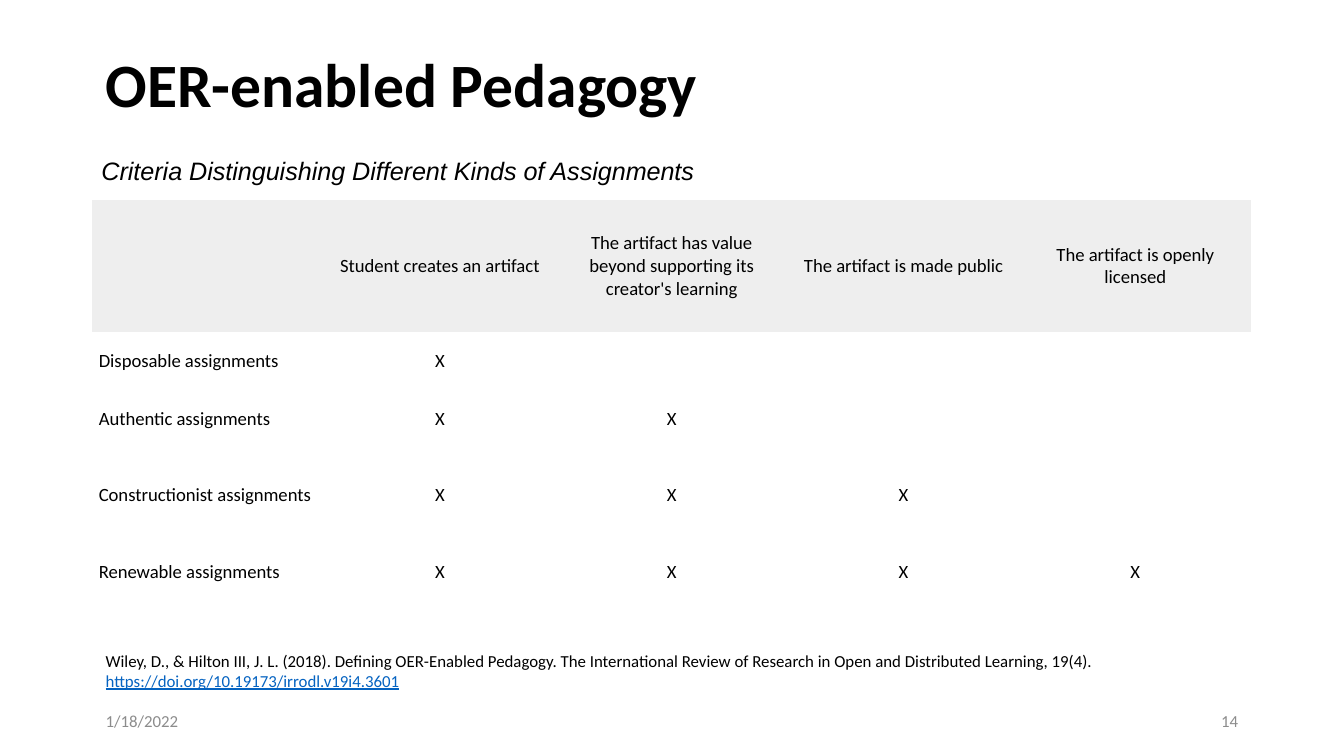
from dataclasses import dataclass

from pptx import Presentation
from pptx.dml.color import RGBColor
from pptx.enum.text import MSO_ANCHOR, PP_ALIGN
from pptx.oxml.ns import qn
from pptx.util import Inches, Pt

LEFT, CENTER, RIGHT = PP_ALIGN.LEFT, PP_ALIGN.CENTER, PP_ALIGN.RIGHT
TOP, MIDDLE = MSO_ANCHOR.TOP, MSO_ANCHOR.MIDDLE

BLACK = RGBColor(0x00, 0x00, 0x00)
GRAY = RGBColor(0x8C, 0x8C, 0x8C)
HEADER_FILL = RGBColor(0xEE, 0xEE, 0xEE)
LINK_BLUE = RGBColor(0x05, 0x63, 0xC1)

PAGE_WIDTH = Inches(10)
PAGE_HEIGHT = PAGE_WIDTH * 9 // 16
PLAIN_STYLE = "{2D5ABB26-0587-4C30-8999-92F81FD0307C}"
CELL_MARGIN = Inches(0.05)

CRITERIA = [
    "Student creates an artifact",
    "The artifact has value beyond supporting its creator's learning",
    "The artifact is made public",
    "The artifact is openly licensed",
]
ASSIGNMENTS = ["Disposable", "Authentic", "Constructionist", "Renewable"]
ROW_HEIGHTS = [0.98, 0.43, 0.43, 0.71, 0.43]


@dataclass(frozen=True)
class Area:
    left: float
    top: float
    width: float
    height: float

    def lengths(self) -> tuple[int, int, int, int]:
        return (
            int(PAGE_WIDTH * self.left / 100),
            int(PAGE_HEIGHT * self.top / 100),
            int(PAGE_WIDTH * self.width / 100),
            int(PAGE_HEIGHT * self.height / 100),
        )


@dataclass(frozen=True)
class Span:
    text: str
    size: float
    color: RGBColor = BLACK
    font: str = "Calibri"
    bold: bool = False
    italic: bool = False
    underline: bool = False


@dataclass(frozen=True)
class Note:
    area: Area
    spans: tuple[Span, ...]
    align: PP_ALIGN = LEFT
    anchor: MSO_ANCHOR = MIDDLE
    wrap: bool = True
    margins: tuple[float, float] = (0.1, 0.05)


TITLE_AREA = Area(6.85, 6.3, 86.2, 11.4)
TABLE_AREA = Area(6.85, 26.5, 86.25, 53)
NOTES = [
    Note(Area(6.88, 92.7, 22.5, 5.3), (Span("1/18/2022", 9, GRAY),)),
    Note(Area(70.6, 92.7, 22.5, 5.3), (Span("14", 9, GRAY),), align=RIGHT),
    Note(
        Area(6.85, 19.95, 46.8, 5.3),
        (Span("Criteria Distinguishing Different Kinds of Assignments", 13.5,
              font="Arial", italic=True),),
        wrap=False,
        margins=(0.07, 0.04),
    ),
    Note(
        Area(6.88, 85.15, 75.4, 7.1),
        (
            Span("Wiley, D., & Hilton III, J. L. (2018). Defining OER-Enabled "
                 "Pedagogy. The International Review of Research in Open and "
                 "Distributed Learning, 19(4). ", 9),
            Span("https://doi.org/10.19173/irrodl.v19i4.3601", 9, LINK_BLUE,
                 underline=True),
        ),
        anchor=TOP,
    ),
]


def write(frame, spans: tuple[Span, ...], align: PP_ALIGN = LEFT) -> None:
    para = frame.paragraphs[0]
    para.alignment = align
    for span in spans:
        run = para.add_run()
        run.text = span.text
        font = run.font
        font.name, font.size = span.font, Pt(span.size)
        font.bold, font.italic = span.bold, span.italic
        font.underline = span.underline
        font.color.rgb = span.color


def place_title(page) -> None:
    title = page.shapes.title
    title.left, title.top, title.width, title.height = TITLE_AREA.lengths()
    title.text_frame.vertical_anchor = TOP
    title.text_frame.word_wrap = True
    write(title.text_frame, (Span("OER-enabled Pedagogy", 33, bold=True),))
    title.text_frame.paragraphs[0].line_spacing = 0.9


def add_note(page, note: Note) -> None:
    frame = page.shapes.add_textbox(*note.area.lengths()).text_frame
    frame.word_wrap = note.wrap
    frame.vertical_anchor = note.anchor
    side, edge = (Inches(margin) for margin in note.margins)
    frame.margin_left = frame.margin_right = side
    frame.margin_top = frame.margin_bottom = edge
    write(frame, note.spans, note.align)


def add_criteria_table(page) -> None:
    marks = [
        [f"{name} assignments"]
        + ["X" if column <= rank else "" for column in range(len(CRITERIA))]
        for rank, name in enumerate(ASSIGNMENTS)
    ]
    rows = [["", *CRITERIA], *marks]
    table = page.shapes.add_table(
        len(rows), len(rows[0]), *TABLE_AREA.lengths()
    ).table
    table.horz_banding = False
    table._tbl.tblPr.find(qn("a:tableStyleId")).text = PLAIN_STYLE
    for row, height in zip(table.rows, ROW_HEIGHTS):
        row.height = Inches(height)
    for r, texts in enumerate(rows):
        for c, text in enumerate(texts):
            cell = table.cell(r, c)
            cell.vertical_anchor = MIDDLE
            cell.margin_left = cell.margin_right = CELL_MARGIN
            cell.margin_top = cell.margin_bottom = CELL_MARGIN
            if r == 0:
                cell.fill.solid()
                cell.fill.fore_color.rgb = HEADER_FILL
            else:
                cell.fill.background()
            if text:
                write(cell.text_frame, (Span(text, 10),), CENTER if c else LEFT)


def main() -> None:
    deck = Presentation()
    deck.slide_width, deck.slide_height = PAGE_WIDTH, PAGE_HEIGHT
    page = deck.slides.add_slide(deck.slide_layouts.get_by_name("Title Only"))
    place_title(page)
    add_criteria_table(page)
    for note in NOTES:
        add_note(page, note)
    deck.save("out.pptx")


if __name__ == "__main__":
    main()
